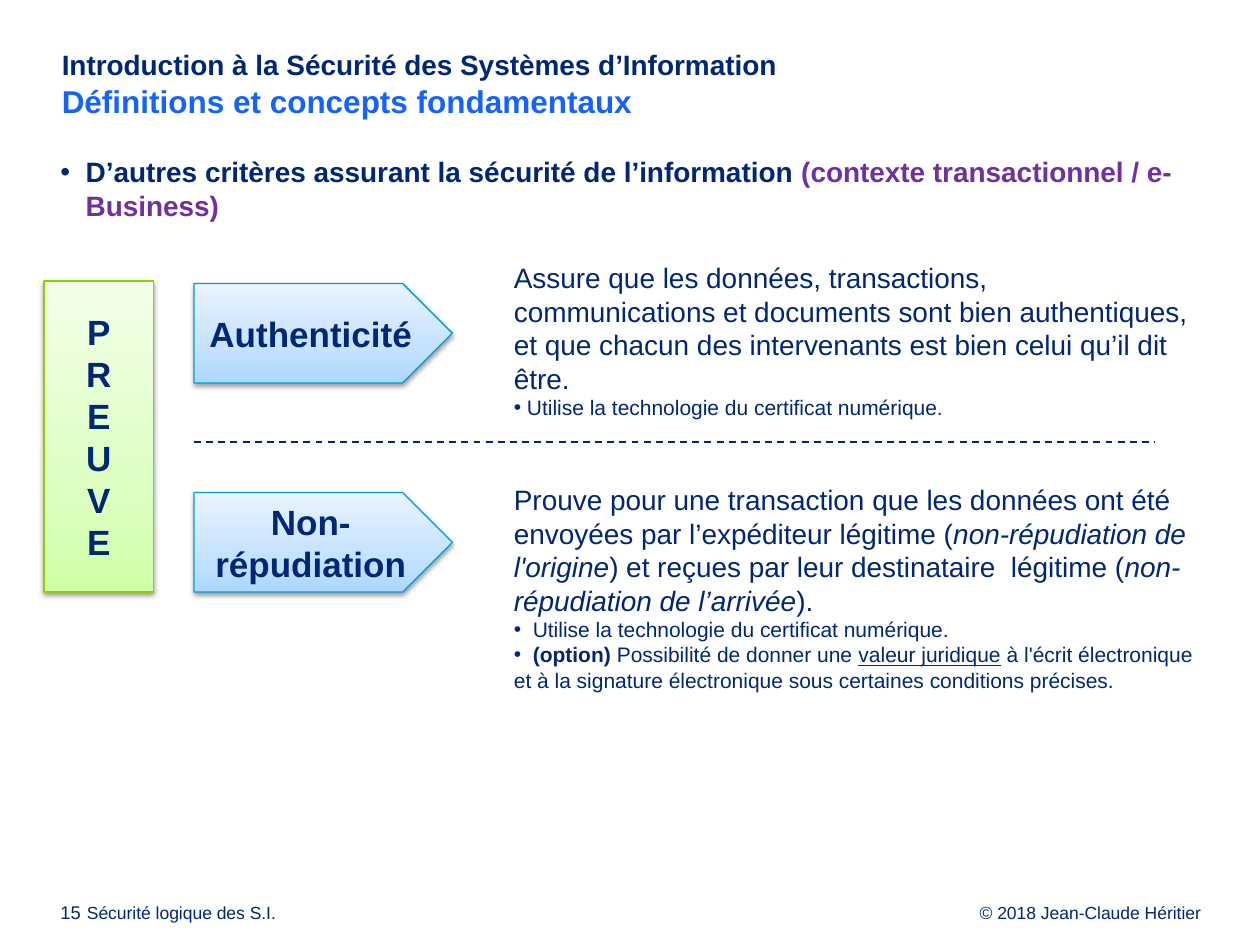
from dataclasses import dataclass, replace
from typing import NamedTuple

from lxml import etree
from pptx import Presentation
from pptx.dml.color import RGBColor
from pptx.enum.dml import MSO_LINE
from pptx.enum.shapes import MSO_CONNECTOR, MSO_SHAPE
from pptx.enum.text import MSO_ANCHOR, PP_ALIGN
from pptx.oxml.ns import qn
from pptx.util import Inches, Pt

WIDTH, HEIGHT = Inches(10), Inches(7.5)
TITLE_ONLY = 5
LEFT, CENTER, RIGHT = PP_ALIGN.LEFT, PP_ALIGN.CENTER, PP_ALIGN.RIGHT
TOP, MIDDLE = MSO_ANCHOR.TOP, MSO_ANCHOR.MIDDLE
ARROW, RECTANGLE = MSO_SHAPE.PENTAGON, MSO_SHAPE.RECTANGLE
STRAIGHT, DASH = MSO_CONNECTOR.STRAIGHT, MSO_LINE.DASH
FONT = "Arial"
NAVY, BRIGHT_BLUE, PURPLE, DIVIDER = "002776", "1462FF", "7030A0", "002673"
TIGHT = (0.04, 0, 0, 0)
FLUSH = (0, 0, 0, 0)
PADDED = (0.1, 0.05, 0.1, 0.05)


class Area(NamedTuple):
    """Percentages of the slide's width and height."""
    left: float
    top: float
    width: float
    height: float

    def emu(self) -> list[int]:
        return [round(share * side / 100)
                for share, side in zip(self, (WIDTH, HEIGHT) * 2)]


@dataclass(frozen=True)
class Span:
    text: str
    size: float = 16
    color: str = NAVY
    bold: bool = False
    italic: bool = False
    underline: bool = False


@dataclass(frozen=True)
class Para:
    spans: tuple[Span, ...]
    bullet: bool = False
    hanging: float = 0


class Palette(NamedTuple):
    stops: tuple[tuple[int, str], ...]
    outline: str


class Criterion(NamedTuple):
    label: str
    arrow_top: float
    text_top: float
    text_height: float
    paragraphs: tuple[Para, ...]


BLUE = Palette(((0, "ADD7FF"), (35, "C5E2FF"), (100, "E9F4FF")), "009DD9")
GREEN = Palette(((0, "D0FFA8"), (35, "DDFFC2"), (100, "F2FFE8")), "8FCF00")

HEADING = Para((
    Span("Introduction à la Sécurité des Systèmes d’Information ", bold=True),
    Span("\nDéfinitions et concepts fondamentaux", 18, BRIGHT_BLUE, True)))
LEAD = Para((
    Span("D’autres critères assurant la sécurité de l’information ", bold=True),
    Span("(contexte transactionnel / e-Business)", color=PURPLE, bold=True)),
    bullet=True, hanging=0.2)

DETAIL = Span("", 12)
CRITERIA = (
    Criterion("Authenticité", 30, 26.93, 18.4, (
        Para((Span("Assure que les données, transactions, communications et "
                   "documents sont bien authentiques, et que chacun des "
                   "intervenants est bien celui qu’il dit être."),)),
        Para((replace(DETAIL, text=" Utilise la technologie du certificat numérique."),),
             bullet=True))),
    Criterion("Non-répudiation", 52.13, 50.4, 23.73, (
        Para((Span("Prouve pour une transaction que les données ont été "
                   "envoyées par l’expéditeur légitime ("),
              Span("non-répudiation de l'origine", italic=True),
              Span(") et reçues par leur destinataire  légitime ("),
              Span("non-répudiation de l’arrivée", italic=True),
              Span(")."))),
        Para((replace(DETAIL, text="  Utilise la technologie du certificat numérique."),),
             bullet=True),
        Para((replace(DETAIL, text="  "),
              replace(DETAIL, text="(option) ", bold=True),
              replace(DETAIL, text="Possibilité de donner une "),
              replace(DETAIL, text="valeur juridique", underline=True),
              replace(DETAIL, text=" à l'écrit électronique et à la signature "
                                   "électronique sous certaines conditions précises.")),
             bullet=True))),
)
FOOTERS = (
    (Area(70, 95.73, 25.3, 2.13), "© 2018 Jean-Claude Héritier", 10, RIGHT),
    (Area(6.9, 95.73, 25.3, 2.13), "Sécurité logique des S.I.", 10, LEFT),
    (Area(4.8, 95.73, 2.6, 2.13), "15", 10.5, LEFT),
)


def rgb(color: str) -> RGBColor:
    return RGBColor.from_string(color)


def add_span(paragraph, span: Span) -> None:
    for index, line in enumerate(span.text.split("\n")):
        if index:
            paragraph.add_line_break()
            line_break = paragraph._p.findall(qn("a:br"))[-1]
            etree.SubElement(line_break, qn("a:rPr"), sz=str(round(span.size * 100)))
        if line:
            run = paragraph.add_run()
            run.text = line
            font = run.font
            font.name, font.size = FONT, Pt(span.size)
            font.bold, font.italic, font.underline = span.bold, span.italic, span.underline
            font.color.rgb = rgb(span.color)


def write(frame, paragraphs: tuple[Para, ...], *, align=LEFT, anchor=TOP,
          insets=PADDED, spacing=None) -> None:
    frame.word_wrap = True
    frame.vertical_anchor = anchor
    (frame.margin_left, frame.margin_top,
     frame.margin_right, frame.margin_bottom) = map(Inches, insets)
    for index, para in enumerate(paragraphs):
        paragraph = frame.add_paragraph() if index else frame.paragraphs[0]
        paragraph.alignment = align
        if spacing:
            paragraph.line_spacing = Pt(spacing)
        if para.bullet:
            properties = paragraph._p.get_or_add_pPr()
            properties.set("marL", str(Inches(para.hanging)))
            properties.set("indent", str(-Inches(para.hanging)))
            etree.SubElement(properties, qn("a:buFont"), typeface=FONT)
            etree.SubElement(properties, qn("a:buChar"), char="•")
        for span in para.spans:
            add_span(paragraph, span)


def add_text(slide, area: Area, paragraphs: tuple[Para, ...], **layout) -> None:
    write(slide.shapes.add_textbox(*area.emu()).text_frame, paragraphs, **layout)


def add_panel(slide, kind, area: Area, label: str, palette: Palette) -> None:
    panel = slide.shapes.add_shape(kind, *area.emu())
    panel.fill.gradient()
    panel.fill.gradient_angle = 90
    panel.line.color.rgb = rgb(palette.outline)
    panel.line.width = Pt(0.75)
    panel.shadow.inherit = False
    properties = panel._element.spPr
    stop_list = properties.find(".//" + qn("a:gsLst"))
    for stop in list(stop_list):
        stop_list.remove(stop)
    for position, color in palette.stops:
        stop = etree.SubElement(stop_list, qn("a:gs"), pos=str(position * 1000))
        etree.SubElement(stop, qn("a:srgbClr"), val=color)
    shadow = etree.SubElement(properties.find(qn("a:effectLst")), qn("a:outerShdw"),
                              blurRad=str(Pt(3.1)), dist=str(Pt(1.6)),
                              dir="5400000", rotWithShape="0")
    tint = etree.SubElement(shadow, qn("a:srgbClr"), val="000000")
    etree.SubElement(tint, qn("a:alpha"), val="38000")
    write(panel.text_frame, (Para((Span(label, 20, bold=True),)),),
          align=CENTER, anchor=MIDDLE)


def add_divider(slide, area: Area) -> None:
    left, top, width, height = area.emu()
    divider = slide.shapes.add_connector(STRAIGHT, left, top, left + width, top + height)
    divider.line.color.rgb = rgb(DIVIDER)
    divider.line.width = Pt(1)
    divider.line.dash_style = DASH
    etree.SubElement(divider._element.spPr, qn("a:effectLst"))


def main() -> None:
    deck = Presentation()
    deck.slide_width, deck.slide_height = WIDTH, HEIGHT
    slide = deck.slides.add_slide(deck.slide_layouts[TITLE_ONLY])
    title = slide.shapes.title
    title.left, title.top, title.width, title.height = Area(4.5, 5.07, 92.1, 9.2).emu()
    write(title.text_frame, (HEADING,), insets=TIGHT)
    for area, text, size, align in FOOTERS:
        add_text(slide, area, (Para((Span(text, size),)),),
                 align=align, insets=FLUSH, spacing=10.8)
    add_text(slide, Area(4.4, 16.4, 92, 5.2), (LEAD,), insets=TIGHT)
    for item in CRITERIA:
        add_panel(slide, ARROW, Area(15.4, item.arrow_top, 20.5, 10.53), item.label, BLUE)
        add_text(slide, Area(39.8, item.text_top, 55.9, item.text_height), item.paragraphs)
    add_divider(slide, Area(15.4, 46.8, 76.3, 0))
    add_panel(slide, RECTANGLE, Area(3.5, 29.73, 8.7, 32.93), "\n".join("PREUVE"), GREEN)
    deck.save("out.pptx")


if __name__ == "__main__":
    main()
